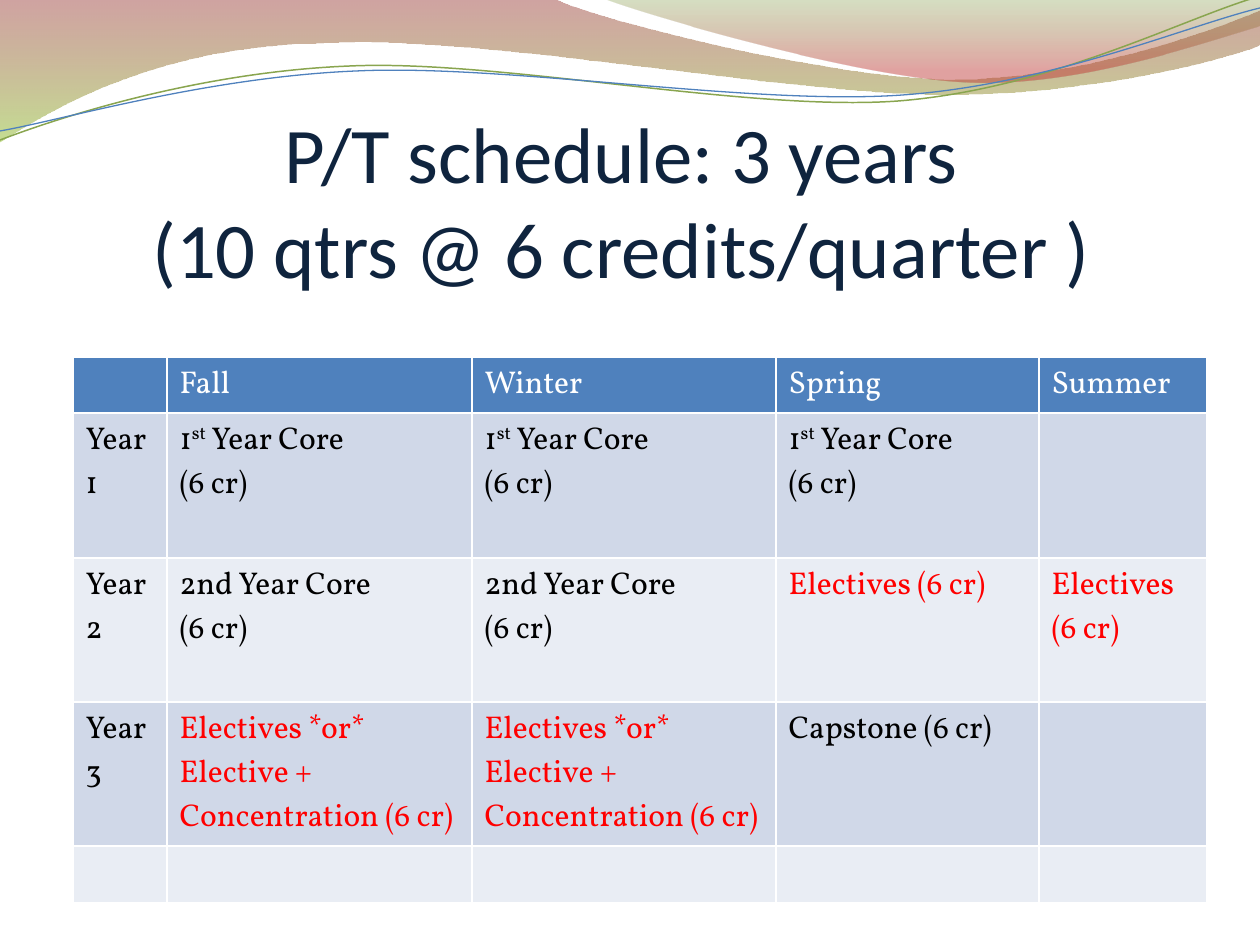
from dataclasses import dataclass

import pptx
import pptx.dml.color
import pptx.enum.text
import pptx.oxml
import pptx.oxml.ns
import pptx.util

EMU_PER_PX = 914400 / 126
BLUE, WHITE, BLACK, RED, NAVY = "4F81BD", "FFFFFF", "000000", "FF0000", "0F243E"
BANDS = ("D0D8E8", "E9EDF4")

Point = tuple[int, int]


@dataclass(frozen=True)
class Stop:
    position: float
    color: str
    alpha: int


@dataclass(frozen=True)
class Wave:
    """Outline of straight (2 numbers) and cubic (6 numbers) segments."""
    start: Point
    segments: tuple[tuple[int, ...], ...]
    stops: tuple[Stop, ...] = ()
    line: str = ""
    width: float = 0


@dataclass(frozen=True)
class Entry:
    text: str = ""
    color: str = BLACK


WAVES = (
    Wave((0, 0), ((554, -1), (600, 21, 837, 79, 955, 79), (1075, 79, 1207, 33, 1260, 11),
                  (1261, 45), (1239, 55, 1096, 96, 940, 94), (784, 94, 481, 35, 324, 43),
                  (163, 45, 58, 105, -1, 142), (0, 0)),
         stops=(Stop(0, "973330", 45), Stop(1, "95C238", 55))),
    Wave((604, -1), ((641, 14, 859, 78, 969, 82), (1079, 87, 1211, 40, 1260, 26),
                     (1260, 0), (604, -1)),
         stops=(Stop(0, "769537", 30), Stop(0.8, "BE3330", 45))),
    Wave((0, 140), ((60, 117, 199, 72, 349, 66), (498, 59, 747, 112, 898, 101),
                    (1050, 89, 1182, 19, 1257, -3)), line="89A54F", width=0.85),
    Wave((0, 131), ((59, 121, 207, 77, 357, 71), (508, 64, 752, 106, 903, 95),
                    (1053, 84, 1186, 26, 1260, 8)), line=BLUE, width=0.75),
)

COLUMNS = (94, 305, 304, 263, 168)
ROWS = (56, 145, 144, 144, 57)
FIRST_CORE = Entry("1^st^ Year Core\n(6 cr)")
SECOND_CORE = Entry("2nd Year Core\n(6 cr)")
MIXED = Entry("Electives *or* Elective + Concentration (6 cr)", RED)
EMPTY = Entry()
SCHEDULE = (
    (EMPTY, *(Entry(term, WHITE) for term in ("Fall", "Winter", "Spring", "Summer"))),
    (Entry("Year 1"), FIRST_CORE, FIRST_CORE, FIRST_CORE, EMPTY),
    (Entry("Year 2"), SECOND_CORE, SECOND_CORE,
     Entry("Electives (6 cr)", RED), Entry("Electives\n(6 cr)", RED)),
    (Entry("Year 3"), MIXED, MIXED, Entry("Capstone (6 cr)"), EMPTY),
    (EMPTY,) * len(COLUMNS),
)


def px(n: int) -> int:
    return pptx.util.Emu(round(n * EMU_PER_PX))


def rgb(color: str) -> pptx.dml.color.RGBColor:
    return pptx.dml.color.RGBColor.from_string(color)


def xml(tag: str, attributes: str = "", content: str = ""):
    """Build one element of the drawing namespace."""
    ns = pptx.oxml.ns.nsdecls("a")
    return pptx.oxml.parse_xml(f"<a:{tag} {ns} {attributes}>{content}</a:{tag}>")


def write(tf, text: str, *, size: float = 18, font: str = "Vollkorn",
          color: str = BLACK, align=None) -> None:
    """Newline starts a paragraph, \\v breaks a line, ^...^ is superscript."""
    for i, paragraph in enumerate(text.split("\n")):
        p = tf.add_paragraph() if i else tf.paragraphs[0]
        p.alignment = align
        for j, line in enumerate(paragraph.split("\v")):
            if j:
                p.add_line_break()
            for k, part in enumerate(line.split("^")):
                r = p.add_run()
                r.text = part
                r.font.size = pptx.util.Pt(size)
                r.font.name = font
                r.font.color.rgb = rgb(color)
                if k % 2:
                    r.font._element.set("baseline", "30000")


def bend(s, wave: Wave) -> None:
    """Join the three straight steps of each cubic segment into one curve."""
    steps = iter(list(s._element.iter(pptx.oxml.ns.qn("a:lnTo"))))
    for segment in wave.segments:
        group = [next(steps) for _ in range(len(segment) // 2)]
        if len(group) == 3:
            curve = xml("cubicBezTo")
            group[0].addprevious(curve)
            for step in group:
                curve.append(step[0])
                step.getparent().remove(step)


def fill_gradient(s, stops: tuple[Stop, ...]) -> None:
    s.fill.gradient()
    s.fill.gradient_angle = 270
    for target, stop in zip(s.fill.gradient_stops, stops):
        target.position = stop.position
        target.color.rgb = rgb(stop.color)
    colors = s._element.spPr.iter(pptx.oxml.ns.qn("a:srgbClr"))
    for element, stop in zip(colors, stops):
        element.append(xml("alpha", f'val="{stop.alpha * 1000}"'))


def draw_wave(slide, wave: Wave) -> None:
    x, y = wave.start
    builder = slide.shapes.build_freeform(px(x), px(y))
    points = [(px(x), px(y)) for segment in wave.segments
              for x, y in zip(segment[::2], segment[1::2])]
    builder.add_line_segments(points, close=bool(wave.stops))
    s = builder.convert_to_shape()
    bend(s, wave)
    s.shadow.inherit = False
    if wave.stops:
        fill_gradient(s, wave.stops)
        s.line.fill.background()
    else:
        s.fill.background()
        s.line.color.rgb = rgb(wave.line)
        s.line.width = pptx.util.Pt(wave.width)


def draw_title(slide) -> None:
    tf = slide.shapes.add_textbox(px(63), px(136), px(1134), px(158)).text_frame
    tf.word_wrap = True
    tf.vertical_anchor = pptx.enum.text.MSO_ANCHOR.BOTTOM
    tf.margin_left = tf.margin_right = tf.margin_bottom = 0
    write(tf, "P/T schedule: 3 years \v(10 qtrs @ 6 credits/quarter ) ", size=45,
          font="Calibri", color=NAVY, align=pptx.enum.text.PP_ALIGN.CENTER)


def set_borders(cell) -> None:
    tc_pr = cell._tc.get_or_add_tcPr()
    fill = f'<a:solidFill><a:srgbClr val="{WHITE}"/></a:solidFill>'
    for i, side in enumerate("LRTB"):
        tc_pr.insert(i, xml(f"ln{side}", f'w="{pptx.util.Pt(1)}"', fill))


def draw_schedule(slide) -> None:
    table = slide.shapes.add_table(len(ROWS), len(COLUMNS), px(73), px(357),
                                   px(sum(COLUMNS)), px(sum(ROWS))).table
    table.first_row = table.horz_banding = False
    for column, width in zip(table.columns, COLUMNS):
        column.width = px(width)
    for i, (row, height, entries) in enumerate(zip(table.rows, ROWS, SCHEDULE)):
        row.height = px(height)
        for cell, entry in zip(row.cells, entries):
            cell.fill.solid()
            cell.fill.fore_color.rgb = rgb(BANDS[(i - 1) % 2] if i else BLUE)
            set_borders(cell)
            if entry.text:
                write(cell.text_frame, entry.text, color=entry.color)


def main() -> None:
    prs = pptx.Presentation()
    prs.slide_width, prs.slide_height = px(1260), px(945)
    slide = prs.slides.add_slide(prs.slide_layouts[6])
    for wave in WAVES:
        draw_wave(slide, wave)
    draw_title(slide)
    draw_schedule(slide)
    prs.save("out.pptx")


if __name__ == "__main__":
    main()
